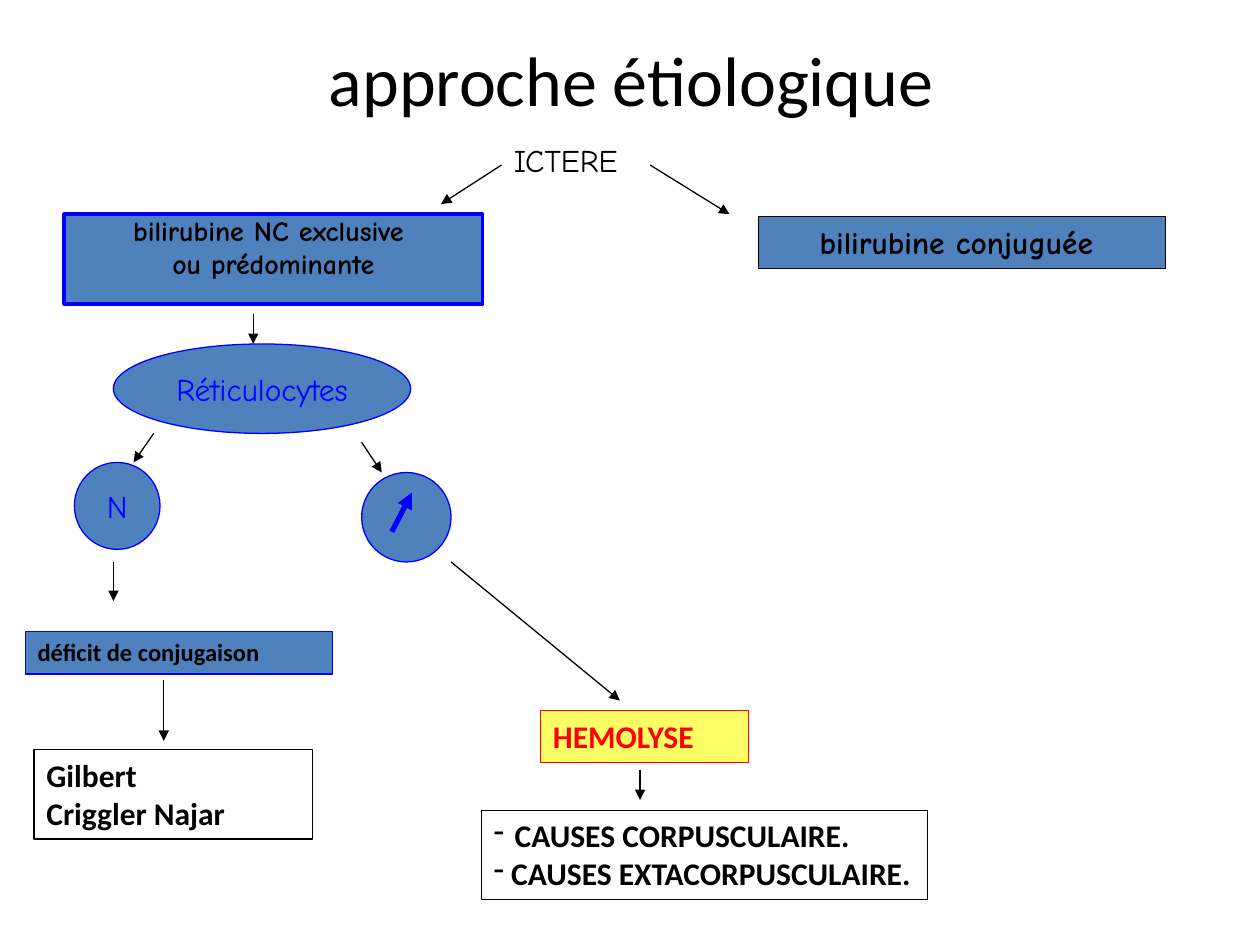
from pptx import Presentation
from pptx.dml.color import RGBColor
from pptx.enum.shapes import MSO_CONNECTOR, MSO_SHAPE
from pptx.enum.text import MSO_ANCHOR, MSO_AUTO_SIZE, PP_ALIGN
from pptx.oxml.ns import qn
from pptx.util import Inches, Pt
from lxml.etree import SubElement as add_element

BLACK = RGBColor(0x00, 0x00, 0x00)
BLUE = RGBColor(0x00, 0x00, 0xFF)
STEEL = RGBColor(0x4F, 0x81, 0xBD)
RED = RGBColor(0xFF, 0x00, 0x00)
YELLOW = RGBColor(0xFF, 0xFF, 0x66)

SANS, COMIC = "Calibri", "Comic Neue"
RECT, OVAL = MSO_SHAPE.RECTANGLE, MSO_SHAPE.OVAL
GROW = MSO_AUTO_SIZE.SHAPE_TO_FIT_TEXT

# The slide is a grid of 100 columns by 75 rows
COLUMNS, ROWS = 100, 75
CELL = Inches(0.1)

# Formats of text frames, paragraphs and fonts
FREE = {"word_wrap": True}
GROWING = {"word_wrap": True, "auto_size": GROW}
MIDDLE = {"word_wrap": False, "vertical_anchor": MSO_ANCHOR.MIDDLE}
LEFT = {"alignment": PP_ALIGN.LEFT}
CENTRE = {"alignment": PP_ALIGN.CENTER}
TIGHT = {**CENTRE, "line_spacing": 0.8, "space_before": Pt(3.2)}


def font(name, size, bold=False):
    return {"name": name, "size": Pt(size), "bold": bold}


def apply(target, values):
    for name, value in values.items():
        setattr(target, name, value)


def grid(*cells):
    return [round(cell * CELL) for cell in cells]


def write(box, lines, style, color=BLACK, frame=FREE, layout=LEFT):
    """Fill a box with one paragraph per line."""
    text = box.text_frame
    apply(text, frame)
    for index, line in enumerate(lines):
        para = text.add_paragraph() if index else text.paragraphs[0]
        apply(para, layout)
        add_span(para, line, style, color)


def add_span(para, line, style, color):
    span = para.add_run()
    span.text = line
    apply(span.font, style)
    span.font.color.rgb = color


def add_node(page, kind, place, fill=None, outline=BLACK, width=0.75):
    node = page.shapes.add_shape(kind, *grid(*place))
    node.shadow.inherit = False
    if fill is None:
        node.fill.background()
    else:
        node.fill.solid()
        node.fill.fore_color.rgb = fill
    node.line.color.rgb = outline
    node.line.width = Pt(width)
    node.text_frame.vertical_anchor = MSO_ANCHOR.TOP
    return node


def add_arrow(page, start, end, color=BLACK, width=0.75):
    arrow = page.shapes.add_connector(MSO_CONNECTOR.STRAIGHT, *grid(*start, *end))
    arrow.line.color.rgb = color
    arrow.line.width = Pt(width)
    add_element(arrow.line._get_or_add_ln(), qn("a:tailEnd"), type="triangle")
    add_element(arrow._element.spPr, qn("a:effectLst"))


def add_dashes(box):
    for para in box.text_frame.paragraphs:
        add_element(para._p.get_or_add_pPr(), qn("a:buChar"), char="-")


def main():
    deck = Presentation()
    deck.slide_width, deck.slide_height = grid(COLUMNS, ROWS)
    page = deck.slides.add_slide(deck.slide_layouts[6])

    # Title and starting point
    title = page.shapes.add_textbox(*grid(5.1, 0, 90, 12.5))
    write(title, ["approche étiologique"], font(SANS, 40),
          frame={**MIDDLE, "word_wrap": True}, layout=CENTRE)
    start = page.shapes.add_textbox(*grid(39.8, 10.7, 11.3, 4))
    write(start, ["ICTERE"], font(COMIC, 18), frame={"word_wrap": False, "auto_size": GROW})

    # The two kinds of bilirubin
    free = add_node(page, RECT, (5.1, 17, 33.2, 7.1), STEEL, BLUE, 2.25)
    write(free, ["bilirubine NC exclusive ", "ou prédominante"],
          font(COMIC, 16, True), layout=TIGHT)
    bound = add_node(page, RECT, (60.2, 17.2, 32.3, 4.1), STEEL)
    write(bound, ["bilirubine conjuguée "], font(COMIC, 18, True),
          frame=GROWING, layout=CENTRE)

    # Reticulocyte count: normal or raised
    for label, place in (("Réticulocytes", (9, 27.3, 23.6, 7.1)),
                         ("N", (5.9, 36.7, 6.8, 6.9))):
        oval = add_node(page, OVAL, place, STEEL, BLUE)
        write(oval, [label], font(COMIC, 18), BLUE, MIDDLE, CENTRE)
    add_node(page, OVAL, (28.7, 37.5, 7.1, 7.1), STEEL, BLUE)
    add_arrow(page, (31.1, 42.2), (32.7, 39.1), BLUE, 3)

    # Diagnoses
    deficit = add_node(page, RECT, (2, 50.1, 24.4, 3.4), STEEL, BLUE)
    write(deficit, ["déficit de conjugaison"], font(SANS, 14, True), frame=GROWING)
    syndromes = add_node(page, RECT, (2.7, 59.5, 22.1, 7.1))
    write(syndromes, ["Gilbert", "Criggler Najar"], font(SANS, 18, True), frame=GROWING)
    hemolysis = add_node(page, RECT, (42.9, 56.4, 16.5, 4.1), YELLOW, RED)
    write(hemolysis, ["HEMOLYSE"], font(SANS, 18, True), RED, GROWING)

    # Causes of hemolysis, the first led by a space in the other font
    causes = add_node(page, RECT, (38.2, 64.3, 35.4, 7.1))
    write(causes, [" ", " CAUSES EXTACORPUSCULAIRE."], font(SANS, 18, True), frame=GROWING)
    first = causes.text_frame.paragraphs[0]
    apply(first.runs[0].font, font(COMIC, 18))
    add_span(first, "CAUSES CORPUSCULAIRE.", font(SANS, 18, True), BLACK)
    add_dashes(causes)

    # Arrows between the steps
    for begin, end in (
        ((39.8, 13.1), (35, 16.2)),
        ((51.6, 13.1), (57.9, 17)),
        ((20.1, 24.9), (20.1, 27.3)),
        ((12.2, 34.4), (10.6, 36.7)),
        ((28.7, 35.1), (30.3, 37.5)),
        ((9, 44.6), (9, 47.7)),
        ((13, 54), (13, 58.8)),
        ((35.8, 44.6), (49.2, 55.6)),
        ((50.8, 61.1), (50.8, 63.5)),
    ):
        add_arrow(page, begin, end)

    deck.save("out.pptx")


if __name__ == "__main__":
    main()
